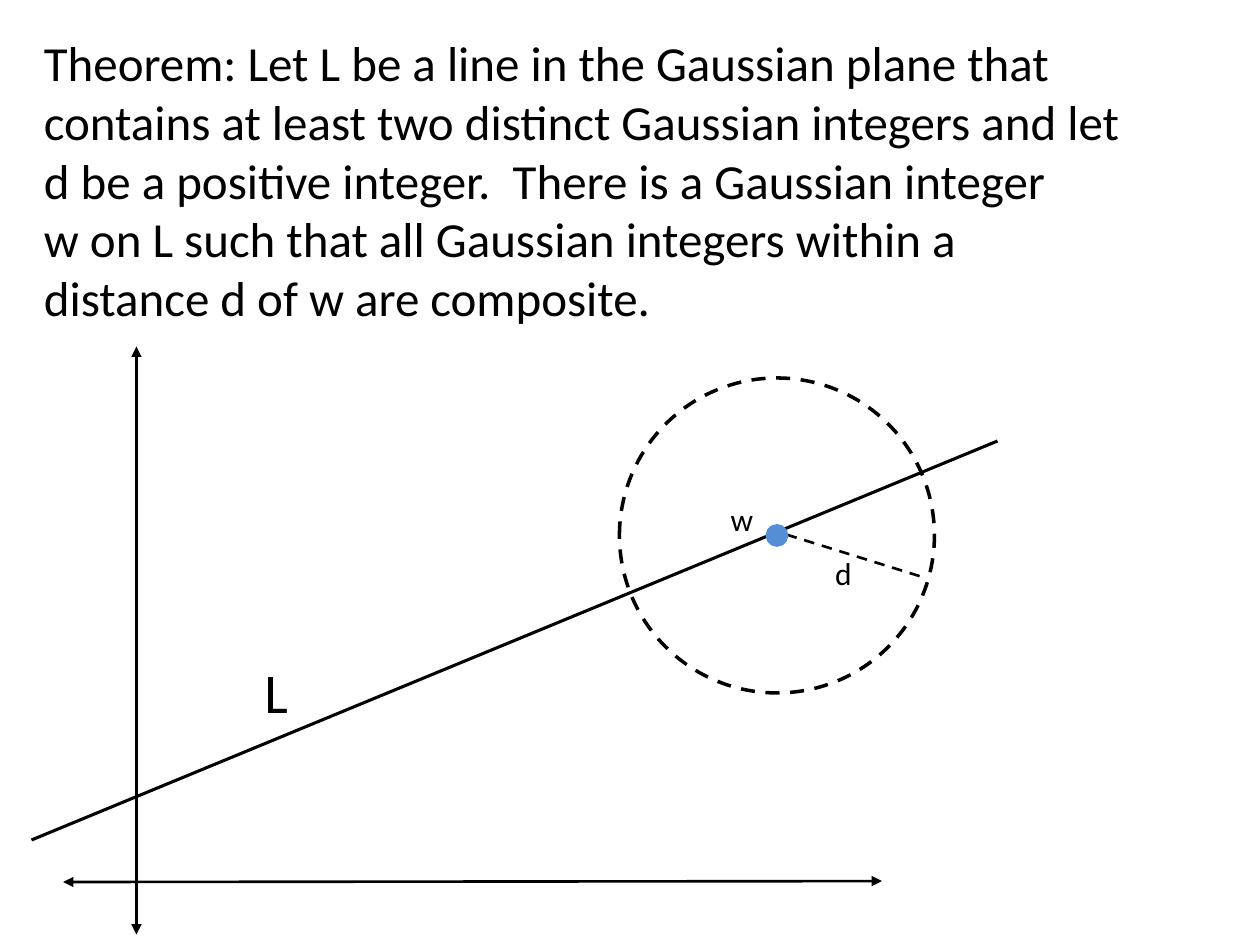
from typing import NamedTuple

from lxml.etree import SubElement
from pptx import Presentation
from pptx.dml.color import RGBColor as RGB
from pptx.enum.dml import MSO_LINE as Dash
from pptx.enum.shapes import MSO_CONNECTOR as Link, MSO_SHAPE as Form
from pptx.oxml.ns import qn
from pptx.util import Pt

INK = {"black": "000000", "blue": "558ED5"}
FONT = "Calibri"


class Label(NamedTuple):
    x: float
    y: float
    w: float
    h: float
    size: float
    text: str


class Line(NamedTuple):
    x1: float
    y1: float
    x2: float
    y2: float
    width: float = 1.5
    arrows: bool = False
    dashed: bool = False


class Disc(NamedTuple):
    x: float
    y: float
    radius: float
    ink: str
    solid: bool


THEOREM = "\n".join([
    "Theorem: Let L be a line in the Gaussian plane that",
    "contains at least two distinct Gaussian integers and let",
    "d be a positive integer.  There is a Gaussian integer",
    "w on L such that all Gaussian integers within a",
    "distance d of w are composite.",
])

# The point w is the shared centre of the dot and the circle
WX, WY = 444, 306
RADIUS, DOT = 90, 5.5

LABELS = [
    Label(18, 15, 636, 177, 28, THEOREM),
    Label(410.4, 282, 27.4, 29, 18, "w"),
    Label(144, 372, 28, 46, 32, "L"),
    Label(470.2, 313.2, 24.5, 29, 18, "d"),
]
LINES = [
    Line(36, 504, 504, 503.5, arrows=True),
    Line(78, 534, 78, 198, arrows=True),
    Line(18, 480, 570, 252, width=1.75),
    Line(WX + DOT, WY - 0.5, 528, 330, dashed=True),
]
DISCS = [
    Disc(WX, WY, DOT, "blue", True),
    Disc(WX, WY, RADIUS, "black", False),
]


def add_label(slide, label: Label) -> None:
    box = slide.shapes.add_textbox(*map(Pt, label[:4]))
    frame = box.text_frame
    frame.word_wrap = False
    frame.text = label.text
    for para in frame.paragraphs:
        for run in para.runs:
            run.font.name = FONT
            run.font.size = Pt(label.size)
            run.font.color.rgb = RGB.from_string(INK["black"])


def add_line(slide, line: Line) -> None:
    link = slide.shapes.add_connector(Link.STRAIGHT, *map(Pt, line[:4]))
    link.line.color.rgb = RGB.from_string(INK["black"])
    link.line.width = Pt(line.width)
    if line.dashed:
        link.line.dash_style = Dash.DASH
    props = link._element.spPr
    if line.arrows:
        for end in ("a:headEnd", "a:tailEnd"):
            SubElement(props.find(qn("a:ln")), qn(end), type="triangle")
    SubElement(props, qn("a:effectLst"))


def add_disc(slide, disc: Disc) -> None:
    size = 2 * disc.radius
    oval = slide.shapes.add_shape(
        Form.OVAL, Pt(disc.x - disc.radius), Pt(disc.y - disc.radius),
        Pt(size), Pt(size))
    oval.shadow.inherit = False
    tint = RGB.from_string(INK[disc.ink])
    oval.line.color.rgb = tint
    oval.line.width = Pt(2)
    if disc.solid:
        oval.fill.solid()
        oval.fill.fore_color.rgb = tint
    else:
        oval.fill.background()
        oval.line.dash_style = Dash.DASH


def main() -> None:
    deck = Presentation()
    deck.slide_width, deck.slide_height = Pt(720), Pt(540)
    slide = deck.slides.add_slide(deck.slide_layouts[6])

    # Axes, line L and radius d, then the discs and the wording
    for line in LINES:
        add_line(slide, line)
    for disc in DISCS:
        add_disc(slide, disc)
    for label in LABELS:
        add_label(slide, label)

    deck.save("out.pptx")


if __name__ == "__main__":
    main()
